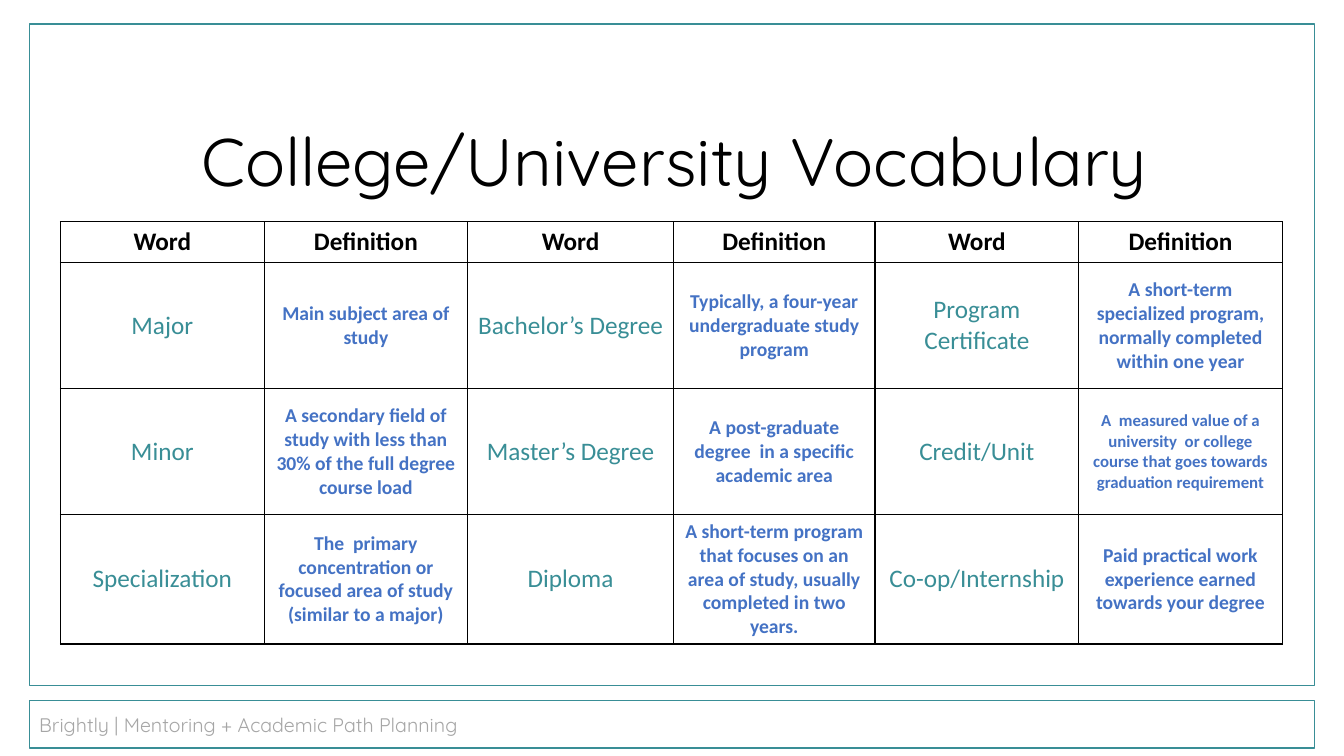
import lxml.etree
import pptx
import pptx.dml.color
import pptx.enum.shapes
import pptx.enum.text
import pptx.oxml.ns
import pptx.util

COLORS = {"ink": "000000", "teal": "398E96", "blue": "4472C4", "grey": "A6A6A6"}
SLIDE_WIDTH, SLIDE_HEIGHT = 13.33, 7.5
MARGIN = 0.29
FRAME_WIDTH = SLIDE_WIDTH - 2 * MARGIN
COLUMN_WIDTHS = [2.02, 2.02, 2.04, 2, 2.02, 2.02]
ROW_HEIGHTS = [0.36, 1.25, 1.25, 1.25]
SMALL_TERM = "Credit/Unit"
VOCABULARY = [
    [
        ("Major", "Main subject area of study"),
        ("Bachelor’s Degree", "Typically, a four-year undergraduate study program"),
        ("Program Certificate",
         "A short-term specialized program, normally completed within one year"),
    ],
    [
        ("Minor", "A secondary field of study with less than 30% of the full degree course load"),
        ("Master’s Degree", "A post-graduate degree  in a specific academic area"),
        (SMALL_TERM, "A  measured value of a university  or college course "
                     "that goes towards graduation requirement"),
    ],
    [
        ("Specialization",
         "The  primary concentration or focused area of study (similar to a major)"),
        ("Diploma", "A short-term program that focuses on an area of study, "
                    "usually completed in two years."),
        ("Co-op/Internship", "Paid practical work experience earned towards your degree"),
    ],
]


def inches(box):
    """Convert a box of left, top, width and height to lengths."""
    return [pptx.util.Inches(length) for length in box]


def rgb(name):
    """Look up a named colour."""
    return pptx.dml.color.RGBColor.from_string(COLORS[name])


def write_text(frame, text, size=18, color="ink", font="Calibri", bold=False,
               align=pptx.enum.text.PP_ALIGN.LEFT,
               anchor=pptx.enum.text.MSO_ANCHOR.MIDDLE):
    """Fill a text frame with one formatted paragraph."""
    frame.word_wrap = True
    frame.vertical_anchor = anchor
    paragraph = frame.paragraphs[0]
    paragraph.alignment = align
    run = paragraph.add_run()
    run.text = text
    run.font.size = pptx.util.Pt(size)
    run.font.name = font
    run.font.bold = bold
    run.font.color.rgb = rgb(color)


def add_panel(slide, box):
    """Add an unfilled rectangle with a teal outline."""
    panel = slide.shapes.add_shape(pptx.enum.shapes.MSO_SHAPE.RECTANGLE, *inches(box))
    panel.shadow.inherit = False
    panel.fill.background()
    panel.line.color.rgb = rgb("teal")
    panel.line.width = pptx.util.Pt(1)
    return panel


def add_title(slide, box):
    """Place the heading in the title placeholder."""
    title = slide.shapes.title
    title.left, title.top, title.width, title.height = inches(box)
    write_text(title.text_frame, "College/University Vocabulary", size=48, font="Quicksand",
               anchor=pptx.enum.text.MSO_ANCHOR.TOP)
    title.text_frame.auto_size = pptx.enum.text.MSO_AUTO_SIZE.NONE


def outline_cell(cell):
    """Clear the fill of a cell and draw its four borders."""
    cell.fill.background()
    properties = cell._tc.get_or_add_tcPr()
    for position, side in enumerate(("lnL", "lnR", "lnT", "lnB")):
        border = lxml.etree.Element(pptx.oxml.ns.qn(f"a:{side}"), w=str(pptx.util.Pt(1)))
        fill = lxml.etree.SubElement(border, pptx.oxml.ns.qn("a:solidFill"))
        lxml.etree.SubElement(fill, pptx.oxml.ns.qn("a:srgbClr"), val=COLORS["ink"])
        properties.insert(position, border)


def fill_cell(cell, text, **text_format):
    """Write centred text in an outlined cell."""
    outline_cell(cell)
    write_text(cell.text_frame, text, align=pptx.enum.text.PP_ALIGN.CENTER, **text_format)
    cell.vertical_anchor = pptx.enum.text.MSO_ANCHOR.MIDDLE


def add_vocabulary(slide, left, top):
    """Add the table of words and definitions."""
    box = (left, top, sum(COLUMN_WIDTHS), sum(ROW_HEIGHTS))
    table = slide.shapes.add_table(len(ROW_HEIGHTS), len(COLUMN_WIDTHS), *inches(box)).table
    table.first_row = table.horz_banding = False
    for column, width in zip(table.columns, COLUMN_WIDTHS):
        column.width = pptx.util.Inches(width)
    for row, height in zip(table.rows, ROW_HEIGHTS):
        row.height = pptx.util.Inches(height)
    for column in range(len(COLUMN_WIDTHS)):
        fill_cell(table.cell(0, column), ("Word", "Definition")[column % 2], bold=True)
    for row, entries in enumerate(VOCABULARY, start=1):
        for pair, (word, definition) in enumerate(entries):
            size = 12 if word == SMALL_TERM else 14
            fill_cell(table.cell(row, 2 * pair), word, color="teal")
            fill_cell(table.cell(row, 2 * pair + 1), definition, size=size,
                      color="blue", bold=True)


def add_footer(slide, box):
    """Add the footer panel with its caption."""
    footer = add_panel(slide, box)
    write_text(footer.text_frame, "Brightly | Mentoring + Academic Path Planning",
               size=14, color="grey", font="Quicksand")


def main():
    """Build and save the vocabulary slide."""
    presentation = pptx.Presentation()
    presentation.slide_width = pptx.util.Inches(SLIDE_WIDTH)
    presentation.slide_height = pptx.util.Inches(SLIDE_HEIGHT)
    slide = presentation.slides.add_slide(presentation.slide_layouts.get_by_name("Title Only"))
    add_title(slide, (1.9, 1.13, 10.07, 0.91))
    add_vocabulary(slide, 0.6, 2.2)
    add_footer(slide, (MARGIN, 6.95, FRAME_WIDTH, 0.47))
    add_panel(slide, (MARGIN, 0.24, FRAME_WIDTH, 6.56))
    presentation.save("out.pptx")


if __name__ == "__main__":
    main()
